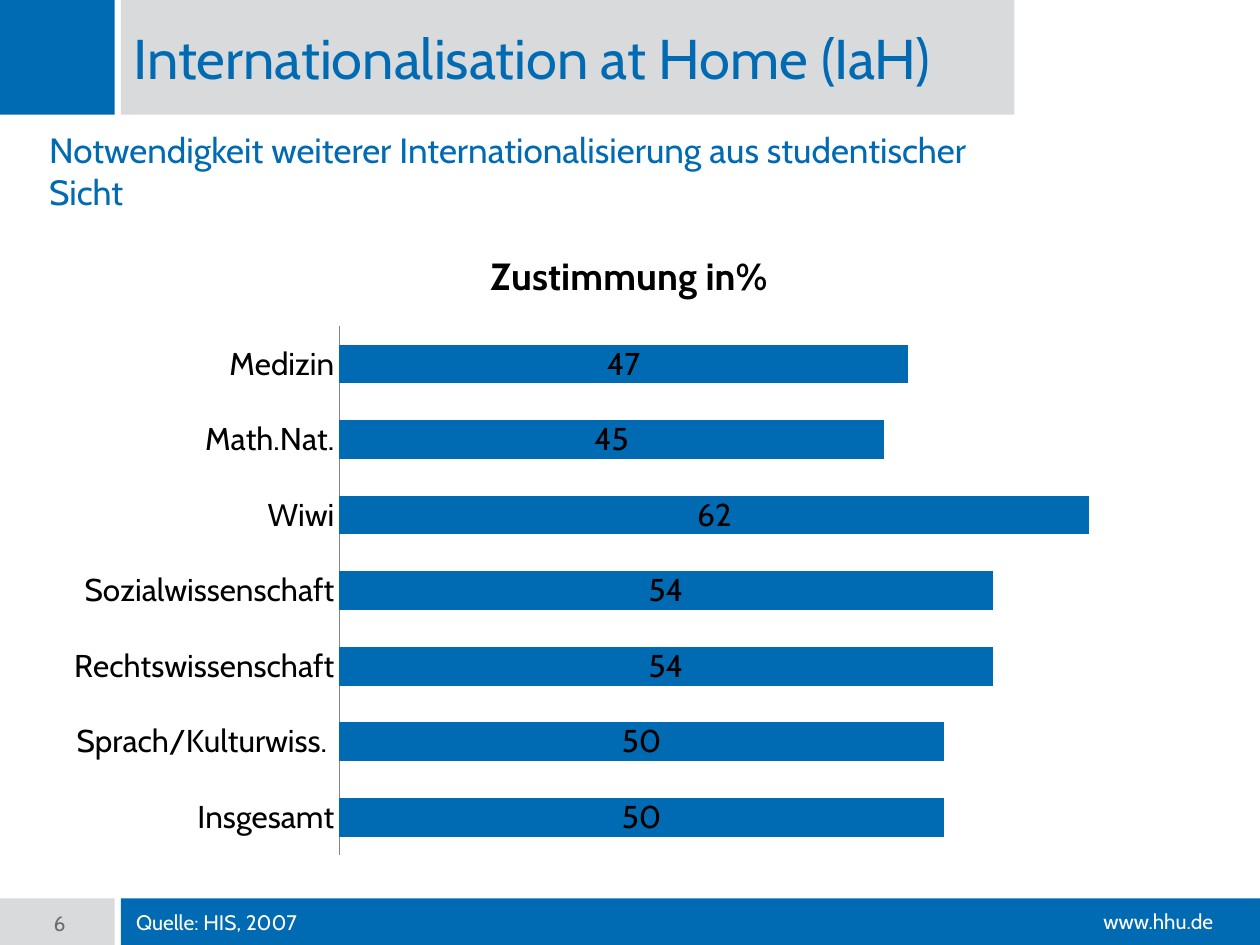
"""Build the slide on internationalisation at home with its bar chart of approval."""
from lxml import etree
from pptx import Presentation
from pptx.chart.data import CategoryChartData
from pptx.dml.color import RGBColor
from pptx.enum.chart import XL_CHART_TYPE as Chart, XL_LABEL_POSITION as LabelPos, XL_TICK_MARK as Tick
from pptx.enum.shapes import MSO_SHAPE as Preset
from pptx.enum.text import MSO_ANCHOR as Anchor, PP_ALIGN as Align
from pptx.oxml.ns import qn
from pptx.util import Inches, Pt

COLORS = {"blue": "006AB3", "grey": "D9DADB", "number": "6A6D70",
          "white": "FFFFFF", "black": "000000", "axis": "868686"}


def rgb(name):
    return RGBColor.from_string(COLORS[name])


class SlideBuilder:
    """Holds the slide and its style, and draws each kind of element."""

    font = "Cabin"

    def __init__(self, slide):
        self.slide = slide

    def style(self, font, size, color, bold=False):
        font.name, font.size, font.bold = self.font, Pt(size), bold
        font.color.rgb = rgb(color)

    def label(self, shape, text, size, color, align=Align.LEFT, anchor=Anchor.MIDDLE, margins=(0, 0)):
        frame = shape.text_frame
        frame.word_wrap = True
        frame.vertical_anchor = anchor
        frame.margin_left, frame.margin_right = (Inches(side) for side in margins)
        frame.margin_top = frame.margin_bottom = 0
        line = frame.paragraphs[0]
        line.text, line.alignment = text, align
        self.style(line.font, size, color)

    def title(self, text, box, size, color, fill):
        heading = self.slide.shapes.title
        heading.left, heading.top, heading.width, heading.height = map(Inches, box)
        heading.fill.solid()
        heading.fill.fore_color.rgb = rgb(fill)
        self.label(heading, text, size, color, margins=(0.1, 0.1))

    def block(self, box, fill):
        block = self.slide.shapes.add_shape(Preset.RECTANGLE, *map(Inches, box))
        block.shadow.inherit = False
        block.fill.solid()
        block.fill.fore_color.rgb = rgb(fill)
        block.line.fill.background()
        return block

    def text(self, text, box, size, color, **layout):
        self.label(self.slide.shapes.add_textbox(*map(Inches, box)), text, size, color, **layout)

    def bar_chart(self, heading, shares, box, plot_box):
        data = CategoryChartData()
        data.categories = list(shares)
        data.add_series(heading, list(shares.values()))
        chart = self.slide.shapes.add_chart(Chart.BAR_STACKED, *map(Inches, box), data).chart
        self.style(chart.font, 18, "black")
        chart.has_legend = False
        chart.has_title = True
        caption = chart.chart_title.text_frame.paragraphs[0]
        caption.text = heading
        self.style(caption.font, 21.6, "black", bold=True)

        plot = chart.plots[0]
        plot.gap_width, plot.overlap, plot.vary_by_categories = 95, 100, False
        bars = plot.series[0].format.fill
        bars.solid()
        bars.fore_color.rgb = rgb("blue")
        plot.has_data_labels = True
        labels = plot.data_labels
        labels.show_value, labels.position = True, LabelPos.CENTER
        self.style(labels.font, 18, "black")

        faculties, percent = chart.category_axis, chart.value_axis
        faculties.major_tick_mark = faculties.minor_tick_mark = Tick.NONE
        faculties.format.line.color.rgb = rgb("axis")
        percent.minimum_scale, percent.maximum_scale = 0, 70
        percent.has_major_gridlines = percent.visible = False
        self.place_plot(chart, plot_box)

    def place_plot(self, chart, fractions):
        area = chart.plots[0]._element.getparent()
        for old in area.findall(qn("c:layout")):
            area.remove(old)
        layout = etree.Element(qn("c:layout"))
        area.insert(0, layout)
        manual = etree.SubElement(layout, qn("c:manualLayout"))
        settings = [("layoutTarget", "inner"), ("xMode", "edge"), ("yMode", "edge"),
                    *zip("xywh", map(str, fractions))]
        for tag, value in settings:
            etree.SubElement(manual, qn(f"c:{tag}")).set("val", value)


def main():
    deck = Presentation()
    deck.slide_width, deck.slide_height = Inches(10), Inches(7.5)
    page = SlideBuilder(deck.slides.add_slide(deck.slide_layouts[5]))

    corner, bar_left, footer_top = 0.91, 0.96, 7.13
    footer_height = 0.39
    page.block((bar_left, footer_top, 10 - bar_left, footer_height), "blue")
    page.block((0, 0, corner, corner), "blue")
    page.text("www.hhu.de", (7.13, 7.21, 2.5, 0.2), 12, "white", align=Align.RIGHT)
    page.title("Internationalisation at Home (IaH)", (bar_left, 0, 7.09, corner), 32, "blue", "grey")

    approval = {"Insgesamt": 50, "Sprach/Kulturwiss. ": 50, "Rechtswissenschaft": 54,
                "Sozialwissenschaft": 54, "Wiwi": 62, "Math.Nat.": 45, "Medizin": 47}
    page.bar_chart("Zustimmung in%", approval, (0.39, 1.77, 9.21, 5.12), (0.25, 0.16, 0.73, 0.82))

    page.text("Quelle: HIS, 2007", (1.08, footer_top, 6.89, 0.37), 12, "white")
    page_number = page.block((0, footer_top, corner, footer_height), "grey")
    page.label(page_number, "6", 12, "number", align=Align.RIGHT, margins=(0, 0.39))
    page.text("Notwendigkeit weiterer Internationalisierung aus studentischer Sicht",
              (0, 1.02, 8.05, 0.52), 20, "blue", anchor=Anchor.TOP, margins=(0.39, 0))
    deck.save("out.pptx")


if __name__ == "__main__":
    main()
